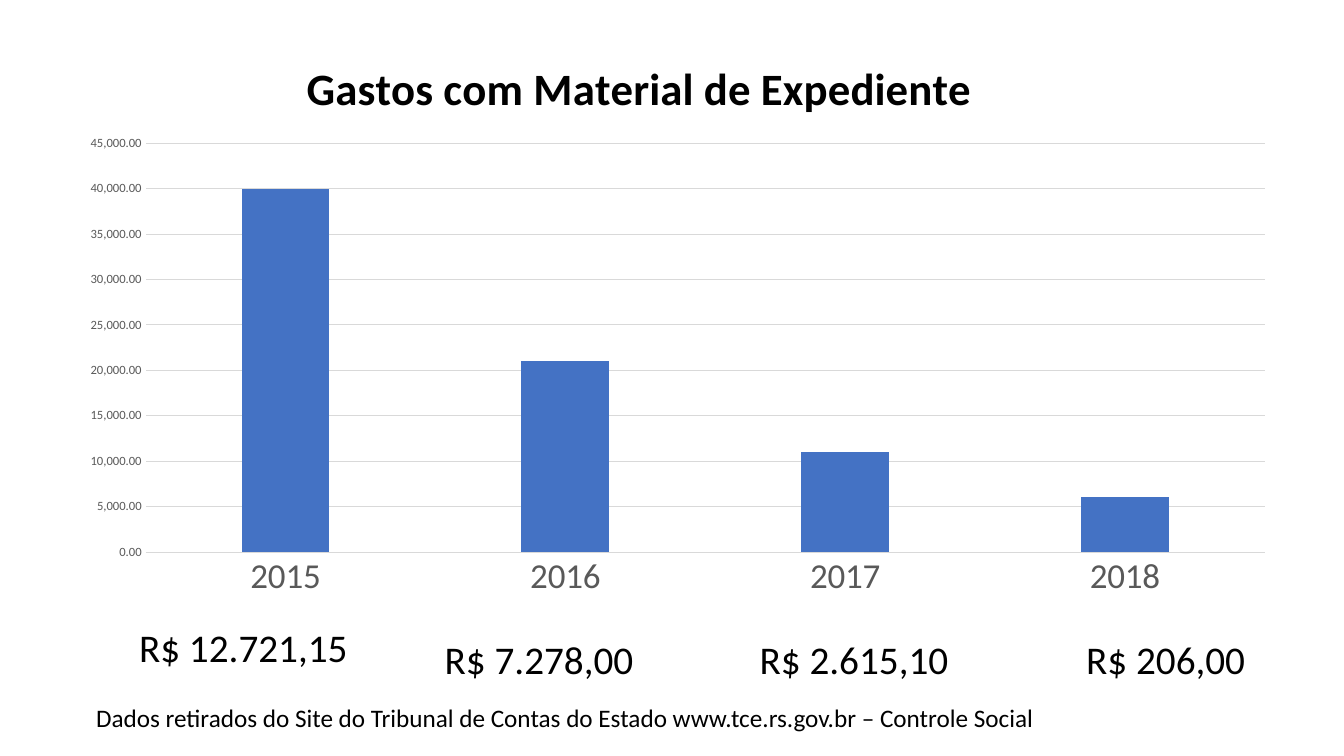
from dataclasses import dataclass

from lxml.etree import SubElement
from pptx import Presentation
from pptx.chart.axis import CategoryAxis, ValueAxis
from pptx.chart.chart import Chart
from pptx.chart.data import CategoryChartData
from pptx.dml.color import RGBColor
from pptx.enum.chart import XL_CHART_TYPE as ChartType, XL_TICK_MARK as TickMark
from pptx.oxml.ns import qn
from pptx.slide import Slide
from pptx.text.text import Font
from pptx.util import Emu, Pt

EMU_PER_PX = 9525
FONT_NAME = "Calibri"
BLACK = RGBColor(0x00, 0x00, 0x00)
AXIS_GRAY = RGBColor(0x59, 0x59, 0x59)
GRID_GRAY = RGBColor(0xD9, 0xD9, 0xD9)
BAR_BLUE = RGBColor(0x44, 0x72, 0xC4)


@dataclass(frozen=True)
class Caption:
    text: str
    left: int
    top: int
    width: int
    height: int
    size: int


CAPTIONS = (
    Caption("R$ 12.721,15", 123, 589, 257, 55, 28),
    Caption("R$ 7.278,00", 414, 600, 239, 55, 28),
    Caption("R$ 2.615,10", 714, 600, 239, 55, 28),
    Caption("R$ 206,00", 1025, 600, 204, 55, 28),
    Caption(
        "Dados retirados do Site do Tribunal de Contas do Estado "
        "www.tce.rs.gov.br – Controle Social",
        82, 664, 1097, 38, 18,
    ),
)
SPENDING = {"2015": 40000, "2016": 21000, "2017": 11000, "2018": 6000}


def px(length: int) -> Emu:
    return Emu(length * EMU_PER_PX)


def style_font(font: Font, size: int, color: RGBColor, bold: bool = False) -> None:
    font.name = FONT_NAME
    font.size = Pt(size)
    font.bold = bold
    font.color.rgb = color


def add_caption(slide: Slide, caption: Caption) -> None:
    box = slide.shapes.add_textbox(
        px(caption.left), px(caption.top), px(caption.width), px(caption.height)
    )
    frame = box.text_frame
    frame.word_wrap = True
    frame.text = caption.text
    style_font(frame.paragraphs[0].runs[0].font, caption.size, BLACK)


def set_layout(layout, **settings: str | float) -> None:
    for old in layout.findall(qn("c:manualLayout")):
        layout.remove(old)
    manual = SubElement(layout, qn("c:manualLayout"))
    for tag, value in settings.items():
        SubElement(manual, qn(f"c:{tag}")).set("val", str(value))


def style_axis(axis: CategoryAxis | ValueAxis, size: int) -> None:
    axis.major_tick_mark = TickMark.NONE
    axis.minor_tick_mark = TickMark.NONE
    style_font(axis.tick_labels.font, size, AXIS_GRAY)


def add_title(chart: Chart) -> None:
    title = chart.chart_title
    title.text_frame.text = "Gastos com Material de Expediente"
    style_font(title.text_frame.paragraphs[0].runs[0].font, 32, BLACK, bold=True)
    title.include_in_layout = False
    element = chart.element.chart.find(qn("c:title"))
    layout = element.find(qn("c:layout"))
    if layout is None:
        layout = SubElement(element, qn("c:layout"))
        element.find(qn("c:tx")).addnext(layout)
    set_layout(layout, xMode="edge", yMode="edge", x=0.19, y=0.04)


def add_spending_chart(slide: Slide) -> None:
    spending = CategoryChartData(number_format="#,##0.00")
    spending.categories = list(SPENDING)
    spending.add_series("Series 1", list(SPENDING.values()))
    chart = slide.shapes.add_chart(
        ChartType.COLUMN_CLUSTERED, px(63), px(24), px(1165), px(557), spending
    ).chart
    style_font(chart.font, 10, BLACK)
    chart.has_legend = False
    add_title(chart)

    years = chart.category_axis
    style_axis(years, 25)
    years.format.line.color.rgb = GRID_GRAY
    years.format.line.width = Pt(0.75)

    amounts = chart.value_axis
    style_axis(amounts, 9)
    amounts.minimum_scale, amounts.maximum_scale = 0, 45000
    amounts.major_unit = 5000
    amounts.tick_labels.number_format = "#,##0.00"
    amounts.tick_labels.number_format_is_linked = False
    amounts.format.line.fill.background()
    amounts.major_gridlines.format.line.color.rgb = GRID_GRAY
    amounts.major_gridlines.format.line.width = Pt(0.75)

    columns = chart.plots[0]
    columns.gap_width = 219
    columns.overlap = -27
    columns.vary_by_categories = False
    bars = columns.series[0].format
    bars.fill.solid()
    bars.fill.fore_color.rgb = BAR_BLUE
    bars.line.fill.background()

    plot_area = chart.element.chart.plotArea
    layout = plot_area.find(qn("c:layout"))
    if layout is None:
        layout = SubElement(plot_area, qn("c:layout"))
        plot_area.insert(0, layout)
    set_layout(
        layout, layoutTarget="inner", xMode="edge", yMode="edge",
        x=0.065, y=0.202, w=0.915, h=0.699,
    )


def main() -> None:
    deck = Presentation()
    deck.slide_width, deck.slide_height = px(1280), px(720)
    slide = deck.slides.add_slide(deck.slide_layouts[6])
    add_spending_chart(slide)
    for caption in CAPTIONS:
        add_caption(slide, caption)
    deck.save("out.pptx")


if __name__ == "__main__":
    main()
